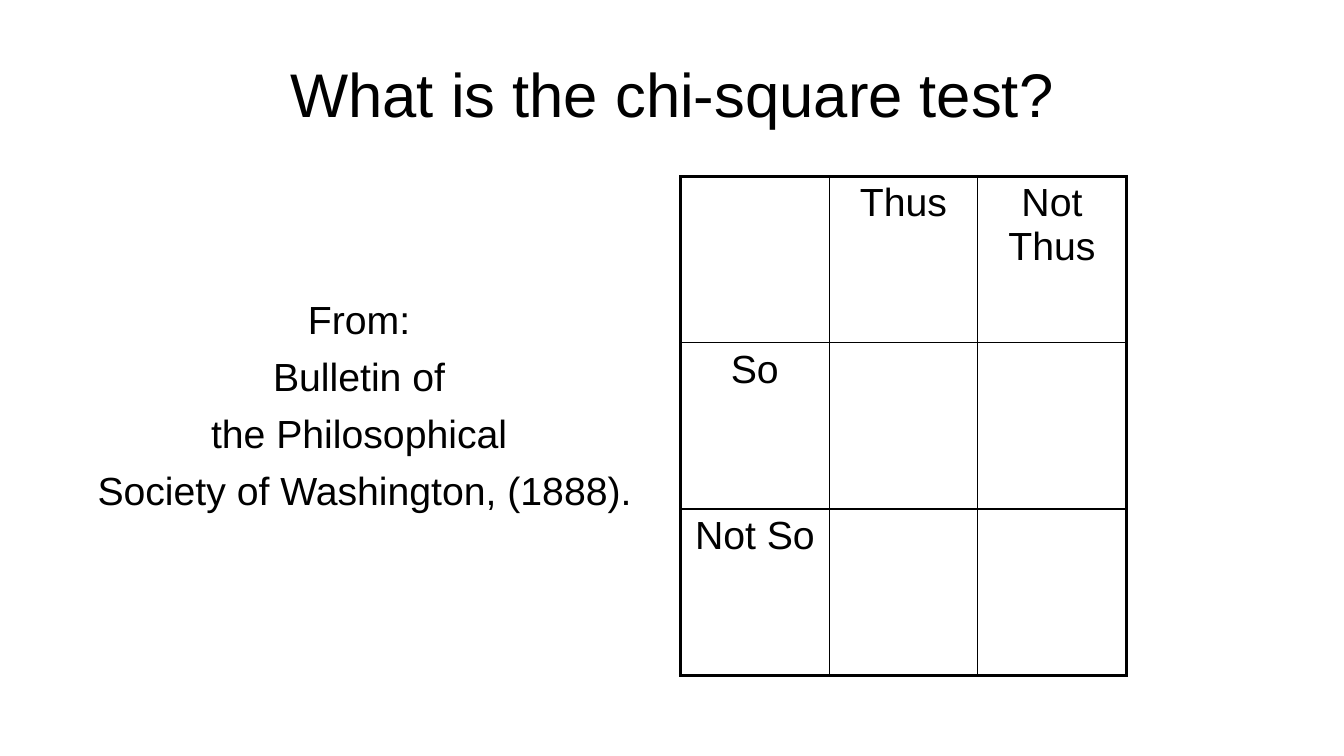
from lxml.etree import SubElement
from pptx import Presentation
from pptx.dml.color import RGBColor
from pptx.enum.text import MSO_ANCHOR, MSO_AUTO_SIZE, PP_ALIGN
from pptx.oxml.ns import qn
from pptx.util import Inches, Pt

BLACK = RGBColor(0x00, 0x00, 0x00)
WHITE = RGBColor(0xFF, 0xFF, 0xFF)
THIN, THICK = 1, 2.25
TITLE = "What is the chi-square test?"
CITATION = [
    ("From: ", -0.38),
    ("Bulletin of ", -0.7),
    ("the Philosophical ", -0.38),
    ("Society of Washington, (1888).", -0.38),
]
CONTINGENCY = [["", "Thus", "Not Thus"], ["So", "", ""], ["Not So", "", ""]]


class SlideBuilder:
    """Builds the elements of one slide in a shared style."""

    def __init__(self, slide, font="Arial", text_size=28, title_size=44):
        self.slide = slide
        self.font = font
        self.text_size = text_size
        self.title_size = title_size
        slide.background.fill.solid()
        slide.background.fill.fore_color.rgb = WHITE

    def format_paragraph(self, paragraph, size):
        paragraph.alignment = PP_ALIGN.CENTER
        for run in paragraph.runs:
            run.font.name = self.font
            run.font.size = Pt(size)
            run.font.color.rgb = BLACK

    def place(self, shape, left, top, width, height):
        shape.left, shape.top = Inches(left), Inches(top)
        shape.width, shape.height = Inches(width), Inches(height)
        shape.text_frame.auto_size = MSO_AUTO_SIZE.NONE

    def title(self, text, *box):
        shape = self.slide.shapes.title
        self.place(shape, *box)
        shape.text_frame.text = text
        shape.text_frame.vertical_anchor = MSO_ANCHOR.MIDDLE
        self.format_paragraph(shape.text_frame.paragraphs[0], self.title_size)

    def body(self, lines, *box):
        shape = self.slide.placeholders[1]
        self.place(shape, *box)
        frame = shape.text_frame
        frame.margin_top = Inches(1.18)
        frame.text = "\n".join(text for text, indent in lines)
        for index, (paragraph, (text, indent)) in enumerate(zip(frame.paragraphs, lines)):
            self.format_paragraph(paragraph, self.text_size)
            paragraph.space_before = Pt(7 if index else 0)
            properties = paragraph._p.get_or_add_pPr()
            properties.set("marL", str(Inches(0.38)))
            properties.set("indent", str(Inches(indent)))
            SubElement(properties, qn("a:buNone"))

    def border(self, cell, side, width):
        line = SubElement(cell._tc.get_or_add_tcPr(), qn(f"a:ln{side}"), w=str(Pt(width)))
        fill = SubElement(line, qn("a:solidFill"))
        SubElement(fill, qn("a:srgbClr"), val=str(BLACK))

    def table(self, rows, left, top, width, height):
        row_count, column_count = len(rows), len(rows[0])
        table = self.slide.shapes.add_table(
            row_count, column_count, Inches(left), Inches(top), Inches(width), Inches(height)
        ).table
        table.first_row = table.horz_banding = False
        for row, texts in enumerate(rows):
            for column, text in enumerate(texts):
                cell = table.cell(row, column)
                cell.text_frame.text = text
                self.format_paragraph(cell.text_frame.paragraphs[0], self.text_size)
                outer_sides = {
                    "L": column == 0,
                    "R": column == column_count - 1,
                    "T": row == 0,
                    "B": row == row_count - 1,
                }
                for side, is_outer in outer_sides.items():
                    self.border(cell, side, THICK if is_outer else THIN)
                cell.fill.background()


def main():
    presentation = Presentation()
    presentation.slide_width = Inches(13.33)
    presentation.slide_height = Inches(7.5)
    slide = presentation.slides.add_slide(presentation.slide_layouts[1])
    builder = SlideBuilder(slide)
    builder.title(TITLE, 0.67, 0.3, 12, 1.25)
    builder.body(CITATION, 0.67, 1.75, 5.89, 4.95)
    builder.table(CONTINGENCY, 6.75, 1.75, 4.42, 4.95)
    presentation.save("out.pptx")


if __name__ == "__main__":
    main()
